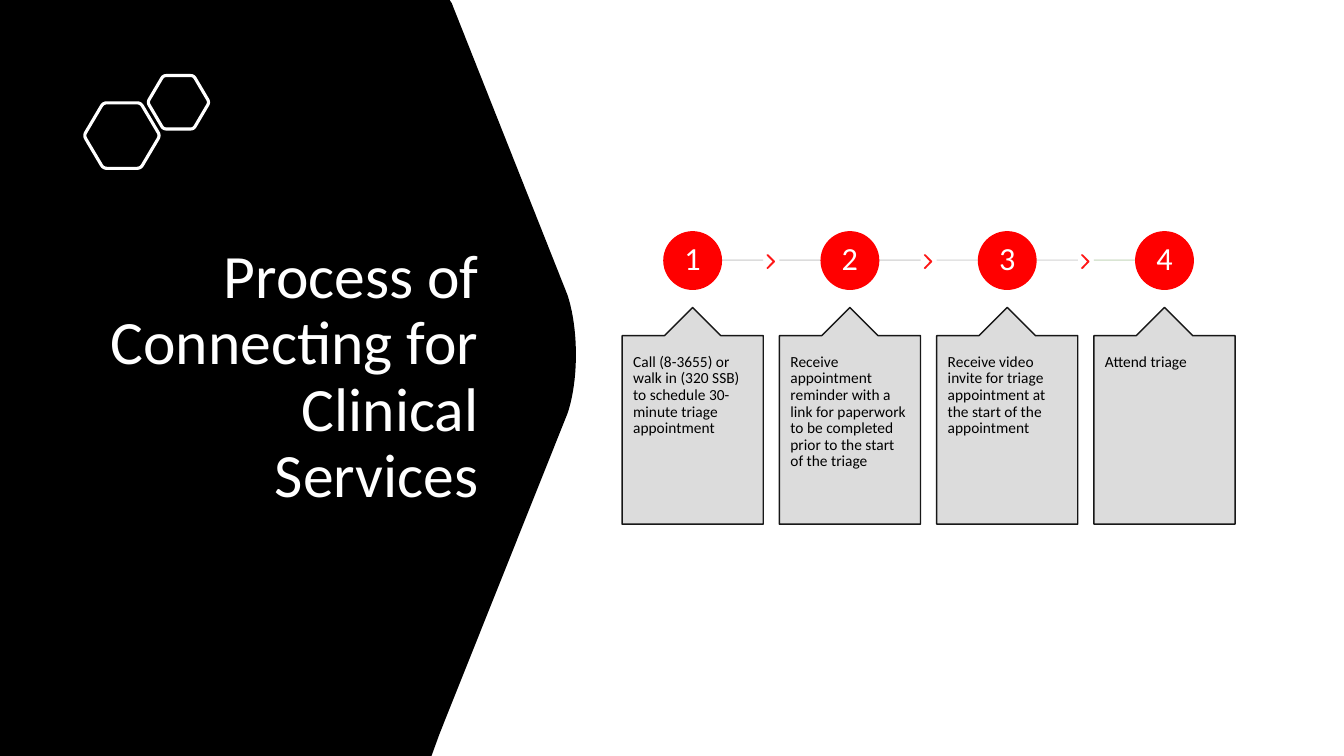
from pptx import Presentation
from pptx.dml.color import RGBColor
from pptx.enum.shapes import MSO_CONNECTOR, MSO_SHAPE
from pptx.enum.text import MSO_ANCHOR, PP_ALIGN
from pptx.oxml.ns import qn
from pptx.oxml.xmlchemy import OxmlElement
from pptx.util import Inches, Pt

STRAIGHT = MSO_CONNECTOR.STRAIGHT
CHEVRON, OVAL = MSO_SHAPE.CHEVRON, MSO_SHAPE.OVAL
CALLOUT = MSO_SHAPE.UP_ARROW_CALLOUT
TOP, MIDDLE = MSO_ANCHOR.TOP, MSO_ANCHOR.MIDDLE
LEFT, CENTER, RIGHT = PP_ALIGN.LEFT, PP_ALIGN.CENTER, PP_ALIGN.RIGHT

BLACK, WHITE, RED, GRAY = "000000", "FFFFFF", "FF0000", "D9D9D9"


def paint(fill, color, opacity=100):
    fill.solid()
    fill.fore_color.rgb = RGBColor.from_string(color)
    if opacity < 100:
        alpha = OxmlElement("a:alpha")
        alpha.set("val", str(opacity * 1000))
        fill._xPr.find(qn("a:solidFill"))[0].append(alpha)


def write(sp, text, size, color, align, anchor, insets=None):
    tf = sp.text_frame
    tf.word_wrap = True
    tf.vertical_anchor = anchor
    if insets:
        tf.margin_left = tf.margin_right = Inches(insets[0])
        tf.margin_top = tf.margin_bottom = Inches(insets[1])
    p = tf.paragraphs[0]
    p.alignment = align
    p.line_spacing = 0.9
    r = p.add_run()
    r.text = text
    r.font.size = Pt(size)
    r.font.name = "Calibri"
    paint(r.font.fill, color)


prs = Presentation()
prs.slide_width, prs.slide_height = Inches(13.33), Inches(7.5)
slide = prs.slides.add_slide(prs.slide_layouts[5])
shapes = slide.shapes

title = shapes.title
title.left, title.top = Inches(0.84), Inches(1.83)
title.width, title.height = Inches(4.01), Inches(3.84)
write(title, "Process of Connecting for Clinical Services", 44, WHITE, RIGHT, MIDDLE)

outline = [(4.46, 0), (4.48, 0.03)]
for i in range(21):
    t = i / 20
    bulge = 3 * t * (1 - t)
    y = 2.93 * (1 - t) ** 3 + bulge * (3.27 * (1 - t) + 3.77 * t) + 4.1 * t ** 3
    outline.append((5.63 + 0.11 * bulge, y))
outline += [(4.36, 7.28), (4.28, 7.5), (0, 7.5)]
builder = shapes.build_freeform(0, 0, scale=1.0)
builder.add_line_segments([(Inches(x), Inches(y)) for x, y in outline])
panel = builder.convert_to_shape()
panel.shadow.inherit = False
paint(panel.fill, BLACK)
panel.line.fill.background()
title._element.addprevious(panel._element)

corners = [(-0.01, 0.5), (0.25, 0), (0.75, 0), (1.01, 0.5), (0.75, 1), (0.25, 1)]
for x, y, w, h in [(0.84, 1.02, 0.74, 0.65), (1.47, 0.75, 0.6, 0.53)]:
    points = []
    for i, corner in enumerate(corners):
        before, after = corners[i - 1], corners[(i + 1) % 6]
        for step in range(7):
            t = step / 6
            a, b = 0.1 * (1 - t) ** 2, 0.1 * t ** 2
            px, py = (c + a * (m - c) + b * (n - c)
                      for m, c, n in zip(before, corner, after))
            points.append((Inches(x + w * px), Inches(y + h * py)))
    builder = shapes.build_freeform(*points[0], scale=1.0)
    builder.add_line_segments(points[1:])
    hexagon = builder.convert_to_shape()
    hexagon.shadow.inherit = False
    hexagon.fill.background()
    paint(hexagon.line.fill, WHITE)
    hexagon.line.width = Pt(2.25)

steps = [
    ("Call (8-3655) or walk in (320 SSB) to schedule 30-minute triage appointment",
     GRAY, "E1E1E1"),
    ("Receive appointment reminder with a link for paperwork to be completed "
     "prior to the start of the triage", GRAY, "D5E3CF"),
    ("Receive video invite for triage appointment at the start of the appointment",
     "E1E1E1", "FFE8CC"),
    ("Attend triage", "D5E3CF", None),
]
card_w, pitch, circle_d = 1.4, 1.56, 0.57

for i, (text, rail_color, chevron_color) in enumerate(steps):
    x = 6.17 + i * pitch
    center = x + card_w / 2
    rail_start = center if i == 0 else x
    rail_end = center if i == len(steps) - 1 else x + card_w

    rail = shapes.add_connector(STRAIGHT, Inches(rail_start), Inches(2.58),
                                Inches(rail_end), Inches(2.58))
    paint(rail.line.fill, rail_color, 90)
    rail.line.width = Pt(1)
    rail._element.spPr.append(OxmlElement("a:effectLst"))

    circle_x = center - circle_d / 2
    parts = [
        (OVAL, circle_x, 2.3, circle_d, circle_d, [], RED, RED, 100),
        (CALLOUT, x, 3.05, card_w, 2.15, [0.5, 0.2, 0.2, 1], GRAY, BLACK, 90),
    ]
    if chevron_color:
        parts.append((CHEVRON, x + 1.44, 2.53, 0.07, 0.13, [0.9],
                      chevron_color, RED, 90))
    drawn = []
    for kind, left, top, w, h, adjustments, fill, line, opacity in parts:
        sp = shapes.add_shape(kind, Inches(left), Inches(top), Inches(w), Inches(h))
        sp.shadow.inherit = False
        for n, value in enumerate(adjustments):
            sp.adjustments[n] = value
        paint(sp.fill, fill, opacity)
        paint(sp.line.fill, line, opacity)
        sp.line.width = Pt(1)
        drawn.append(sp)
    write(drawn[0], str(i + 1), 23, WHITE, CENTER, MIDDLE, (0.02, 0.02))
    write(drawn[1], text, 11, BLACK, LEFT, TOP, (0.11, 0.18))

prs.save("out.pptx")
